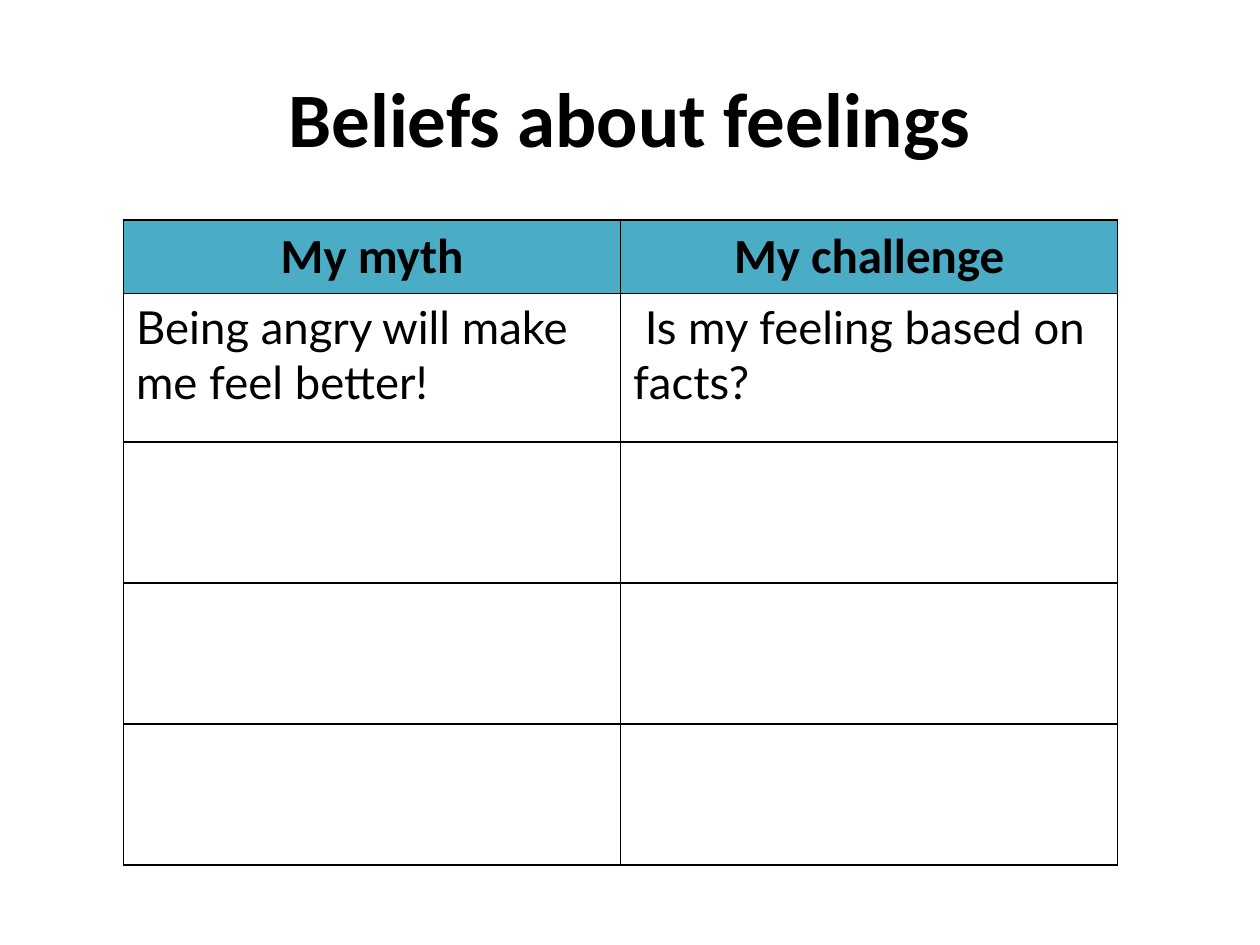
import pptx
import pptx.dml.color
import pptx.enum.text
import pptx.oxml
import pptx.oxml.ns
import pptx.util

ALIGN = pptx.enum.text.PP_ALIGN
ANCHOR = pptx.enum.text.MSO_ANCHOR


def color(hex_value):
    return pptx.dml.color.RGBColor.from_string(hex_value)


class SlideBuilder:
    """Holds the style and the current slide."""

    heading_font = "Calibri"
    body_font = "Lato"
    ink = "000000"
    header_fill = "4BACC6"
    border_width = pptx.util.Pt(1)

    def __init__(self, presentation):
        self.width = presentation.slide_width
        self.height = presentation.slide_height
        self.slide = presentation.slides.add_slide(presentation.slide_layouts[5])

    def box(self, left, top, width, height):
        """Turn shares of the slide's size into lengths."""
        return (int(left * self.width), int(top * self.height),
                int(width * self.width), int(height * self.height))

    def add_text(self, text_frame, text, size, font, bold=False, align=ALIGN.LEFT):
        paragraph = text_frame.paragraphs[0]
        paragraph.alignment = align
        run = paragraph.add_run()
        run.text = text
        run.font.size = pptx.util.Pt(size)
        run.font.name = font
        run.font.bold = bold
        run.font.color.rgb = color(self.ink)

    def title(self, text, *shares):
        shape = self.slide.shapes.title
        shape.left, shape.top, shape.width, shape.height = self.box(*shares)
        shape.text_frame.vertical_anchor = ANCHOR.MIDDLE
        self.add_text(shape.text_frame, text, 44, self.heading_font, True, ALIGN.CENTER)

    def border(self, cell):
        properties = cell._tc.get_or_add_tcPr()
        for position, side in enumerate(("lnL", "lnR", "lnT", "lnB")):
            properties.insert(position, pptx.oxml.parse_xml(
                f'<a:{side} {pptx.oxml.ns.nsdecls("a")} w="{self.border_width}">'
                f'<a:solidFill><a:srgbClr val="{self.ink}"/></a:solidFill></a:{side}>'))

    def table(self, rows, row_inches, *shares):
        shape = self.slide.shapes.add_table(len(rows), len(rows[0]), *self.box(*shares))
        table = shape.table
        for row, inches in zip(table.rows, row_inches):
            row.height = pptx.util.Inches(inches)
        for row_index, texts in enumerate(rows):
            is_header = row_index == 0
            for column_index, text in enumerate(texts):
                cell = table.cell(row_index, column_index)
                if is_header:
                    cell.fill.solid()
                    cell.fill.fore_color.rgb = color(self.header_fill)
                    self.add_text(cell.text_frame, text, 28, self.heading_font,
                                  True, ALIGN.CENTER)
                else:
                    cell.fill.background()
                    if text:
                        self.add_text(cell.text_frame, text, 26, self.body_font)
                self.border(cell)


def main():
    presentation = pptx.Presentation()
    presentation.slide_width = pptx.util.Inches(10)
    presentation.slide_height = pptx.util.Inches(7.5)
    builder = SlideBuilder(presentation)

    # Title
    builder.title("Beliefs about feelings", 0.05, 0.04, 0.9, 0.167)

    # Worksheet table: header, one example and three rows to fill in
    rows = [
        ("My myth", "My challenge"),
        ("Being angry will make me feel better!", " Is my feeling based on facts?"),
    ] + [("", "")] * 3
    row_inches = [0.58, 1.18] + [1.12] * 3
    builder.table(rows, row_inches, 0.098, 0.233, 0.789, 0.683)

    presentation.save("out.pptx")


if __name__ == "__main__":
    main()
